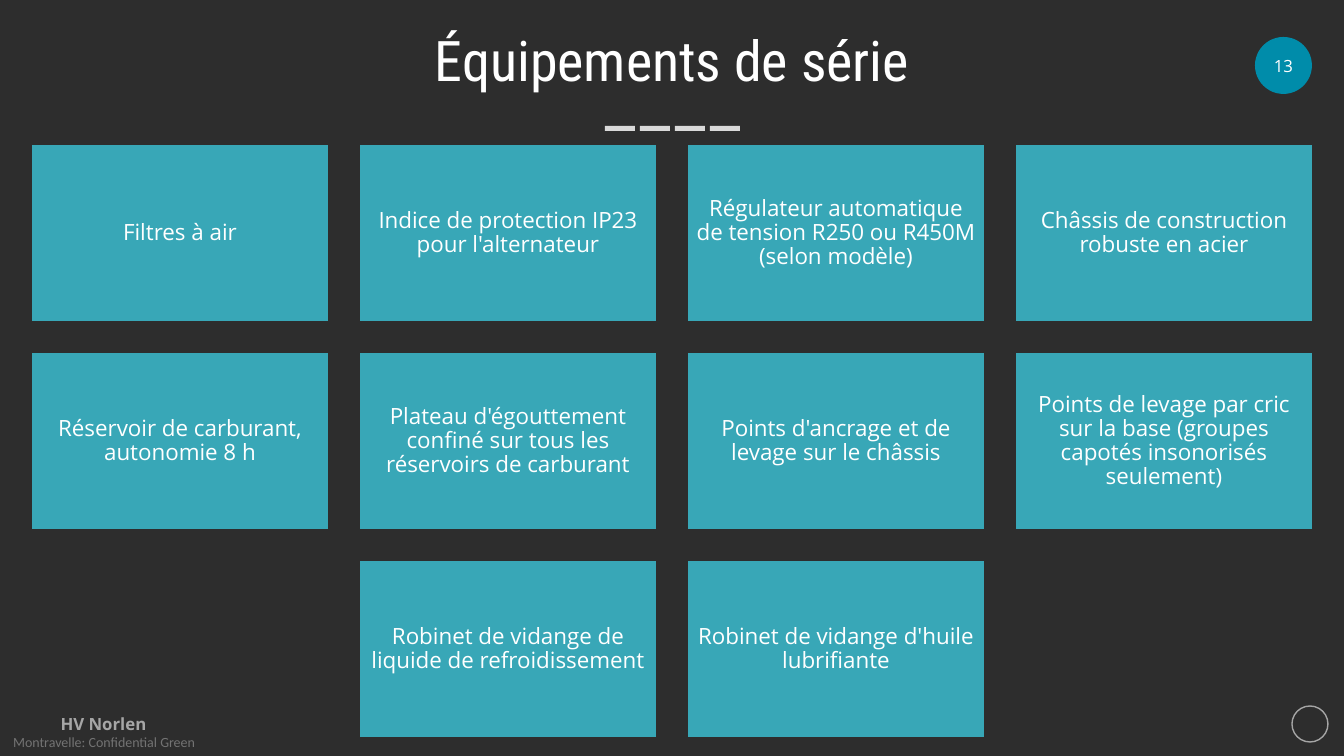
from pptx import Presentation
from pptx.dml.color import RGBColor as RGB
from pptx.enum.shapes import MSO_SHAPE as Shape
from pptx.enum.text import MSO_ANCHOR as Anchor, MSO_AUTO_SIZE as Fit, PP_ALIGN as Align
from pptx.util import Pt

INK = {
    "back": "2D2D2D",
    "tile": "38A7B7",
    "badge": "008CAA",
    "dash": "D9D9D9",
    "brand": "A6A6A6",
    "class": "737373",
    "text": "FFFFFF",
}
PX = 914400 / 100.8
TILES = [
    (0, 0, "Filtres à air"),
    (1, 0, "Indice de protection IP23 pour l'alternateur"),
    (2, 0, "Régulateur automatique de tension R250 ou R450M (selon modèle)"),
    (3, 0, "Châssis de construction robuste en acier"),
    (0, 1, "Réservoir de carburant, autonomie 8 h"),
    (1, 1, "Plateau d'égouttement confiné sur tous les réservoirs de carburant"),
    (2, 1, "Points d'ancrage et de levage sur le châssis"),
    (3, 1, "Points de levage par cric sur la base (groupes capotés insonorisés seulement)"),
    (1, 2, "Robinet de vidange de liquide de refroidissement"),
    (2, 2, "Robinet de vidange d'huile lubrifiante"),
]


def write(shape, text, size, font="Open Sans", ink="text", bold=False,
          pad=0, wrap=True, anchor=Anchor.MIDDLE, lead=1.0):
    frame = shape.text_frame
    frame.auto_size = Fit.NONE
    frame.word_wrap = wrap
    frame.vertical_anchor = anchor
    frame.margin_left = frame.margin_right = round(pad * PX)
    frame.margin_top = frame.margin_bottom = round(pad * PX)
    para = frame.paragraphs[0]
    para.alignment = Align.CENTER
    para.line_spacing = lead
    run = para.add_run()
    run.text = text
    run.font.size = Pt(size)
    run.font.name = font
    run.font.bold = bold
    run.font.color.rgb = RGB.from_string(INK[ink])


def draw(kind, box, ink, edge=None):
    shape = slide.shapes.add_shape(kind, *[round(n * PX) for n in box])
    shape.shadow.inherit = False
    shape.fill.solid()
    shape.fill.fore_color.rgb = RGB.from_string(INK[ink])
    if edge:
        shape.line.color.rgb = RGB.from_string(INK[edge])
        shape.line.width = Pt(1)
    else:
        shape.line.fill.background()
    return shape


deck = Presentation()
deck.slide_width = round(1344 * PX)
deck.slide_height = round(756 * PX)
slide = deck.slides.add_slide(deck.slide_layouts[5])
slide.background.fill.solid()
slide.background.fill.fore_color.rgb = RGB.from_string(INK["back"])

title = slide.shapes.title
title.left, title.top, title.width, title.height = [
    round(n * PX) for n in (118, 35, 1108, 57)]
write(title, "Équipements de série", 40, font="Roboto Condensed", lead=0.9)

for i in range(4):
    draw(Shape.RECTANGLE, (605 + 35 * i, 126, 30, 5), "dash")

badge = draw(Shape.OVAL, (1255, 37, 57, 57), "badge")
write(badge, "13", 12)

for col, row, text in TILES:
    tile = draw(Shape.RECTANGLE, (31 + 328 * col, 144 + 208 * row, 298, 178), "tile", "back")
    write(tile, text, 16, pad=7, lead=0.9)

brand = slide.shapes.add_textbox(*[round(n * PX) for n in (52, 709, 103, 30)])
write(brand, "HV Norlen", 12, ink="brand", bold=True, pad=5, wrap=False, anchor=Anchor.TOP)

label = slide.shapes.add_textbox(*[round(n * PX) for n in (0, 727, 208, 29)])
write(label, "Montravelle: Confidential Green", 10, font="Calibri", ink="class")

draw(Shape.OVAL, (1292, 706, 36, 36), "back", "brand")

deck.save("out.pptx")
